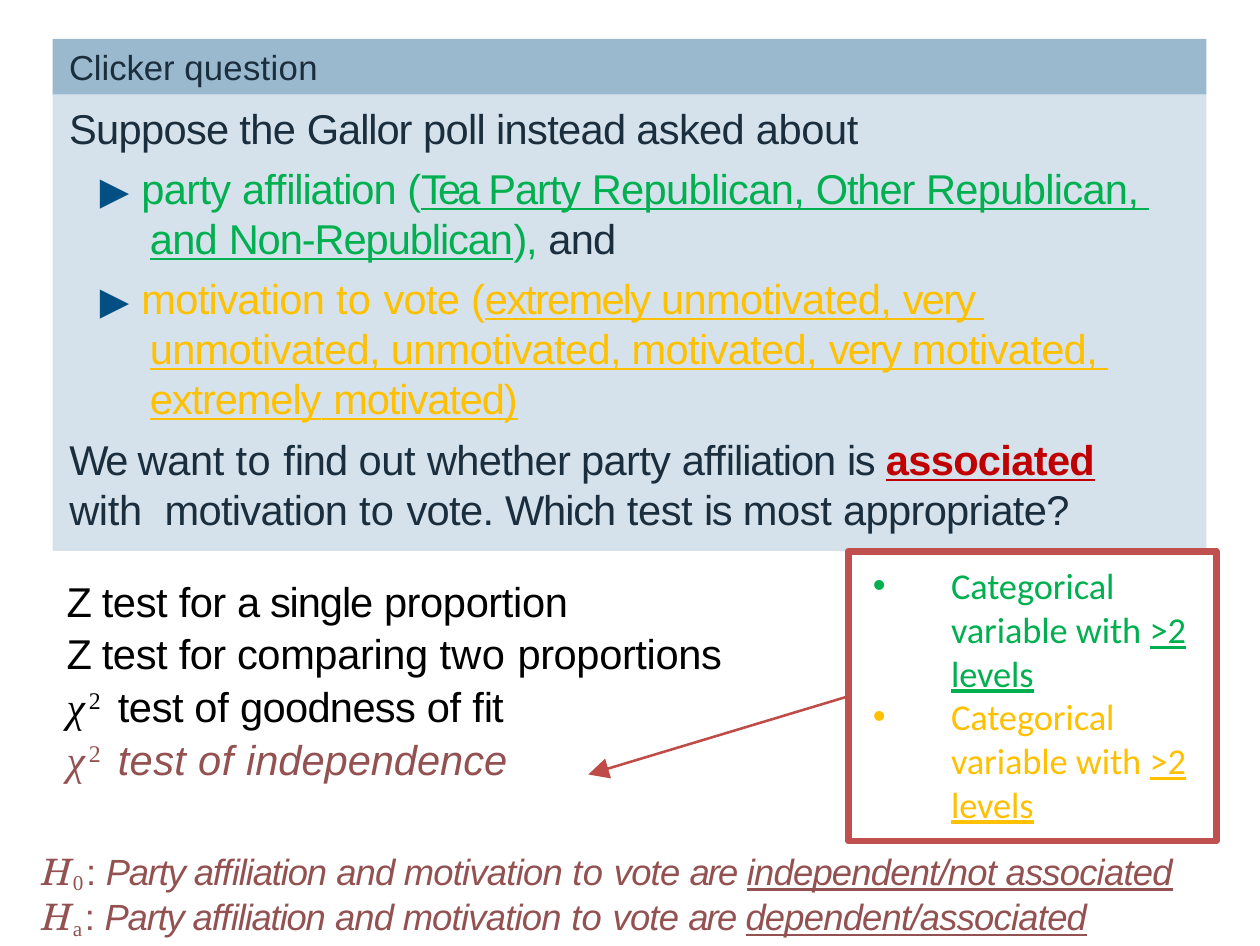
from lxml import etree
from pptx import Presentation
from pptx import util as u
from pptx.dml.color import RGBColor
from pptx.enum import shapes, text
from pptx.oxml.ns import qn

COLORS = {
    "header": "9AB8CE", "panel": "D6E2EB", "ink": "1A2E3D", "marker": "024F84",
    "green": "00B050", "gold": "FFC000", "red": "C00000", "black": "000000",
    "answer": "935151", "border": "C0504D", "arrow": "BF4C48", "white": "FFFFFF",
}
SERIF = "Times New Roman"


def style(color, size=12, font="Arial", **marks):
    """Describe the look of a run."""
    return dict(color=color, size=size, font=font, **marks)


INK = style("ink")
MARKER = style("marker", 11, "DejaVu Serif")
GREEN, GREEN_LINE = style("green"), style("green", underline=True)
GOLD, GOLD_LINE = style("gold"), style("gold", underline=True)
KEYWORD = style("red", bold=True, underline=True)
BLACK = style("black")
ANSWER = style("answer", italic=True)
CLAIM = style("answer", 10.5, italic=True)
CLAIM_LINE = style("answer", 10.5, italic=True, underline=True)

AFFILIATION = [
    ("▶ ", 0, MARKER), ("party ", -0.2, GREEN), ("afﬁliation ", -0.3, GREEN),
    ("(", -1.1, GREEN), ("Tea ", -1.1, GREEN_LINE), ("Party ", -0.3, GREEN_LINE),
    ("Republican, ", -0.2, GREEN_LINE), ("Other ", -0.3, GREEN_LINE),
    ("Republican,  and ", -0.2, GREEN_LINE), ("Non-Republican", -0.3, GREEN_LINE),
    ("), ", -0.3, GREEN), ("and", -0.2, INK),
]
MOTIVATION = [
    ("▶ ", 0, MARKER), ("motivation ", -0.2, GOLD), ("to ", 0.1, GOLD),
    ("vote ", -0.2, GOLD), ("(", -0.5, GOLD), ("extremely ", -0.5, GOLD_LINE),
    ("unmotivated, ", -0.2, GOLD_LINE), ("very  ", -0.5, GOLD_LINE),
    ("unmotivated, unmotivated, motivated, ", -0.2, GOLD_LINE),
    ("very ", -0.5, GOLD_LINE), ("motivated,  ", -0.2, GOLD_LINE),
    ("extremely", -0.3, GOLD_LINE), (" ", -0.1, GOLD_LINE),
    ("motivated)", -0.3, GOLD_LINE),
]
QUESTION = [
    ("We ", -0.7, INK), ("want ", -0.1, INK), ("to ", 0.1, INK),
    ("ﬁnd ", -0.3, INK), ("out ", -0.1, INK), ("whether party ", -0.2, INK),
    ("afﬁliation ", -0.3, INK), ("is ", -0.4, INK), ("associated", -0.2, KEYWORD),
    (" ", -0.2, INK), ("with  ", -0.1, INK), ("motivation ", -0.2, INK),
    ("to ", 0.1, INK), ("vote. ", -0.2, INK), ("Which ", -0.3, INK),
    ("test ", -0.1, INK), ("is ", -0.4, INK), ("most ", -0.1, INK),
    ("appropriate?", -0.2, INK),
]


def chi_square(color):
    """Return the runs of the chi-square symbol."""
    return [("χ", 1.1, style(color, font=SERIF, italic=True)),
            ("2 ", 1.6, style(color, font=SERIF, baseline=31))]


OPTIONS = [
    [("Z ", -0.5, BLACK), ("test ", -0.1, BLACK), ("for ", -0.2, BLACK),
     ("a ", -0.5, BLACK), ("single ", -0.3, BLACK), ("proportion", -0.1, BLACK)],
    [("Z ", -0.5, BLACK), ("test ", -0.1, BLACK), ("for ", -0.2, BLACK),
     ("comparing ", -0.1, BLACK), ("two ", 0.1, BLACK), ("proportions", -0.1, BLACK)],
    chi_square("black") + [("test of ", -0.1, BLACK), ("goodness ", -0.2, BLACK),
                           ("of ", -0.1, BLACK), ("ﬁt", -0.3, BLACK)],
    chi_square("answer") + [("test of ", 0.1, ANSWER), ("independence", 0, ANSWER)],
]


def rgb(name):
    """Look up a named colour."""
    return RGBColor.from_string(COLORS[name])


def add_runs(paragraph, runs):
    """Fill a paragraph with styled, letter-spaced runs."""
    for words, spacing, look in runs:
        run = paragraph.add_run()
        run.text = words
        font = run.font
        font.name, font.size = look["font"], u.Pt(look["size"])
        font.color.rgb = rgb(look["color"])
        font.bold, font.italic = look.get("bold"), look.get("italic")
        font.underline = look.get("underline")
        properties = run._r.get_or_add_rPr()
        properties.set("spc", str(round(spacing * 100)))
        if "baseline" in look:
            properties.set("baseline", str(look["baseline"] * 1000))


def indent(paragraph, margin, hanging=0):
    """Set the left margin and hanging indent of a paragraph."""
    properties = paragraph._p.get_or_add_pPr()
    properties.set("marL", str(u.Pt(margin)))
    properties.set("indent", str(-u.Pt(hanging)))
    return properties


def add_bullet(properties, color, font, tag, **attributes):
    """Give a paragraph a coloured bullet or number."""
    bullet_color = etree.SubElement(properties, qn("a:buClr"))
    etree.SubElement(bullet_color, qn("a:srgbClr"), val=COLORS[color])
    etree.SubElement(properties, qn("a:buFont"), typeface=font)
    etree.SubElement(properties, qn(tag), **attributes)


def add_text_frame(slide, box, insets=(0, 0.7, 0, 0)):
    """Add a wrapping text box and return its frame."""
    frame = slide.shapes.add_textbox(*map(u.Pt, box)).text_frame
    frame.word_wrap = True
    (frame.margin_left, frame.margin_top,
     frame.margin_right, frame.margin_bottom) = map(u.Pt, insets)
    return frame


def add_rectangle(slide, box, fill, line=None):
    """Add a flat rectangle with an optional border."""
    shape = slide.shapes.add_shape(shapes.MSO_SHAPE.RECTANGLE, *map(u.Pt, box))
    shape.shadow.inherit = False
    shape.fill.solid()
    shape.fill.fore_color.rgb = rgb(fill)
    if line:
        shape.line.color.rgb = rgb(line)
        shape.line.width = u.Pt(2)
    else:
        shape.line.fill.background()
    return shape


def add_question_panel(slide, left, top, width, height):
    """Draw the header bar and question panel with their first lines."""
    bar = 16.1
    add_rectangle(slide, (left, top, width, bar), "header")
    add_rectangle(slide, (left, top + bar, width, height - bar), "panel")
    heading = [("Clicker ", 0, style("ink", 10)), ("question", 0.1, style("ink", 10))]
    opening = [("Suppose the ", -0.2, INK), ("Gallor ", -0.3, INK),
               ("poll instead asked ", -0.2, INK), ("about", -0.1, INK)]
    for offset, runs in ((1.2, heading), (bar + 1.6, opening)):
        frame = add_text_frame(slide, (left + 3.8, top + offset, width - 7, 16))
        paragraph = frame.paragraphs[0]
        indent(paragraph, 0.9)
        paragraph.space_before = u.Pt(0.9)
        add_runs(paragraph, runs)


def add_body(slide, left, top, width, height):
    """Write the variables, the question and the lettered options."""
    frame = add_text_frame(slide, (left, top, width, height))
    rows = [(AFFILIATION, 25.2, 14.4, 0.9), (MOTIVATION, 25.2, 14.4, 3.1),
            (QUESTION, 2, 0, 3.1)]
    rows += [(runs, 20.2, 19, 0.8 if number else 12)
             for number, runs in enumerate(OPTIONS)]
    for number, (runs, margin, hanging, before) in enumerate(rows):
        paragraph = frame.add_paragraph() if number else frame.paragraphs[0]
        paragraph.space_before = u.Pt(before)
        properties = indent(paragraph, margin, hanging)
        if runs in OPTIONS:
            add_bullet(properties, "marker", "+mj-lt", "a:buAutoNum",
                       type="alphaParenBoth")
            tabs = etree.SubElement(properties, qn("a:tabLst"))
            etree.SubElement(tabs, qn("a:tab"), pos=str(u.Pt(margin)), algn="l")
        add_runs(paragraph, runs)


def add_callout(slide, left, top, width, height):
    """Draw the boxed hint and its arrow to the right answer."""
    frame = add_rectangle(slide, (left, top, width, height), "white", "border").text_frame
    frame.word_wrap = True
    frame.vertical_anchor = text.MSO_ANCHOR.TOP
    for number, color in enumerate(("green", "gold")):
        paragraph = frame.add_paragraph() if number else frame.paragraphs[0]
        paragraph.alignment = text.PP_ALIGN.LEFT
        add_bullet(indent(paragraph, 22.5, 22.5), color, "Arial", "a:buChar", char="•")
        add_runs(paragraph, [
            ("Categorical variable with ", 0, style(color, 10.5, "Calibri")),
            (">2 levels", 0, style(color, 10.5, "Calibri", underline=True))])
    ends = (left, top + 41.8, left - 74.9, top + 64.3)
    arrow = slide.shapes.add_connector(shapes.MSO_CONNECTOR.STRAIGHT, *map(u.Pt, ends))
    arrow.line.color.rgb = rgb("arrow")
    arrow.line.width = u.Pt(0.75)
    etree.SubElement(arrow.line._get_or_add_ln(), qn("a:tailEnd"), type="triangle")
    etree.SubElement(arrow._element.spPr, qn("a:effectLst"))


def add_hypotheses(slide, left, top, width, height):
    """Write the null and alternative hypotheses."""
    frame = add_text_frame(slide, (left, top, width, height), (7.2, 3.6, 7.2, 3.6))
    claims = (("0 ", "independent/not associated"), ("a ", "dependent/associated"))
    for number, (subscript, ending) in enumerate(claims):
        paragraph = frame.add_paragraph() if number else frame.paragraphs[0]
        indent(paragraph, 2)
        add_runs(paragraph, [
            ("H", -0.5, style("answer", 10.5, "TeX Gyre Schola", italic=True)),
            (subscript, -0.8, style("answer", 10.5, SERIF, baseline=-14)),
            (": ", -0.1, style("answer", 10.5)), ("Party afﬁliation ", -0.3, CLAIM),
            ("and motivation ", -0.2, CLAIM), ("to ", 0.1, CLAIM),
            ("vote ", -0.2, CLAIM), ("are ", -0.5, CLAIM), (ending, -0.2, CLAIM_LINE)])


def main():
    """Build the clicker question slide."""
    presentation = Presentation()
    presentation.slide_width, presentation.slide_height = u.Pt(363), u.Pt(272.5)
    slide = presentation.slides.add_slide(presentation.slide_layouts[6])
    add_question_panel(slide, 15.2, 11.2, 332.4, 147.5)
    add_body(slide, 18, 46.1, 318.5, 214)
    add_callout(slide, 244.4, 158.8, 106, 83.5)
    add_hypotheses(slide, 3.2, 241, 356.4, 32.4)
    presentation.save("out.pptx")


if __name__ == "__main__":
    main()
